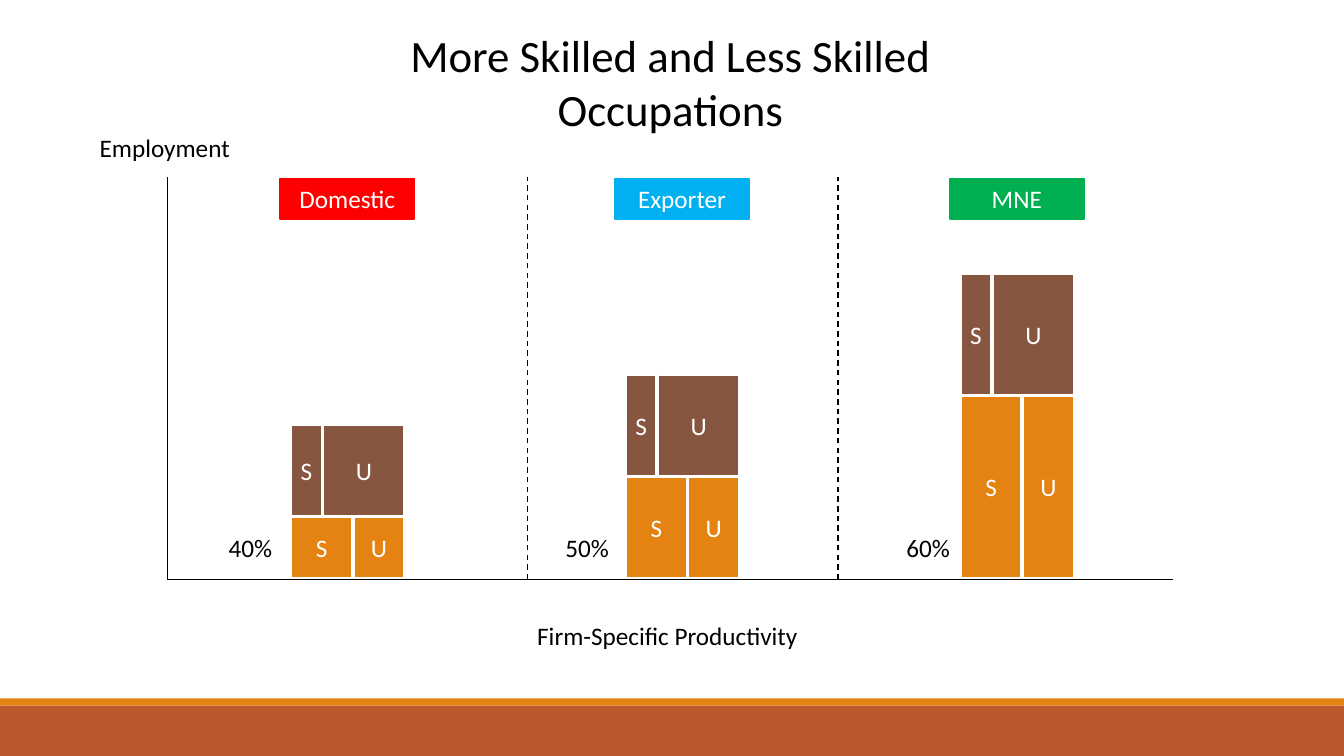
"""Draw employment by skill level for three groups of firms."""
from dataclasses import dataclass

import pptx
import pptx.dml.color
import pptx.enum.dml
import pptx.enum.shapes
import pptx.enum.text
import pptx.oxml
import pptx.util

Inches = pptx.util.Inches
Pt = pptx.util.Pt
Align = pptx.enum.text.PP_ALIGN
Anchor = pptx.enum.text.MSO_ANCHOR


@dataclass(frozen=True)
class Theme:
    """Colours and type sizes."""
    font: str = "Calibri"
    title_size: int = 32
    body_size: int = 18
    black: str = "000000"
    white: str = "FFFFFF"
    rust: str = "BD582C"
    orange: str = "E48312"
    brown: str = "865640"
    red: str = "FF0000"
    blue: str = "00B0F0"
    green: str = "00B050"


class Painter:
    """Add styled elements to one page."""

    def __init__(self, page, theme):
        """Keep the page and its theme."""
        self.page = page
        self.theme = theme

    def colour(self, value):
        """Turn a hex value into a colour."""
        return pptx.dml.color.RGBColor.from_string(value)

    def set_text(self, shape, text, size, colour, align):
        """Put one styled paragraph into a shape."""
        para = shape.text_frame.paragraphs[0]
        para.text = text
        para.alignment = align
        para.font.name = self.theme.font
        para.font.size = Pt(size)
        para.font.color.rgb = self.colour(colour)

    def label(self, text, left, top, width, height=0.4, size=None, align=Align.LEFT):
        """Add a text box."""
        box = self.page.shapes.add_textbox(
            Inches(left), Inches(top), Inches(width), Inches(height))
        box.text_frame.word_wrap = True
        box.text_frame.auto_size = pptx.enum.text.MSO_AUTO_SIZE.SHAPE_TO_FIT_TEXT
        self.set_text(box, text, size or self.theme.body_size, self.theme.black, align)

    def block(self, left, top, width, height, fill, line=None, text=""):
        """Add a filled rectangle, with centred text if given."""
        box = self.page.shapes.add_shape(
            pptx.enum.shapes.MSO_SHAPE.RECTANGLE,
            Inches(left), Inches(top), Inches(width), Inches(height))
        box.shadow.inherit = False
        box.fill.solid()
        box.fill.fore_color.rgb = self.colour(fill)
        if line:
            box.line.color.rgb = self.colour(line)
            box.line.width = Pt(1.25)
        else:
            box.line.fill.background()
        if text:
            frame = box.text_frame
            frame.margin_left = frame.margin_right = 0
            frame.vertical_anchor = Anchor.MIDDLE
            self.set_text(box, text, self.theme.body_size, self.theme.white, Align.CENTER)

    def rule(self, start, end, dashed=False):
        """Add a thin black line."""
        line = self.page.shapes.add_connector(
            pptx.enum.shapes.MSO_CONNECTOR.STRAIGHT,
            *(Inches(value) for value in start + end))
        line.line.color.rgb = self.colour(self.theme.black)
        line.line.width = Pt(1)
        if dashed:
            line.line.dash_style = pptx.enum.dml.MSO_LINE.DASH
        line._element.spPr.append(pptx.oxml.parse_xml(
            '<a:effectLst xmlns:a="http://schemas.openxmlformats.org/drawingml/2006/main"/>'))

    def layer(self, left, top, height, fill, widths):
        """Add a skilled and an unskilled block side by side."""
        for text, width in zip("SU", widths):
            self.block(left, top, width, height, fill, self.theme.white, text)
            left += width + 0.02

    def firm(self, name, left, colour, share, share_left, lower, upper):
        """Add the tag, the share and the stacked blocks of one firm type."""
        self.block(left, 1.77, 1.33, 0.4, colour, colour, name)
        self.label(share, share_left, 5.23, 0.71)
        lower_top = 5.73 - lower
        upper_top = lower_top - 0.01 - upper
        self.layer(left + 0.11, lower_top, lower, self.theme.orange, (0.6, 0.5))
        self.layer(left + 0.11, upper_top, upper, self.theme.brown, (0.3, 0.8))


def main():
    """Build and save the deck."""
    theme = Theme()
    deck = pptx.Presentation()
    deck.slide_width, deck.slide_height = Inches(13.33), Inches(7.5)
    painter = Painter(deck.slides.add_slide(deck.slide_layouts[6]), theme)

    painter.block(0, 7, 13.33, 0.5, theme.rust)
    painter.block(0, 6.93, 13.33, 0.07, theme.orange)

    axis_left, axis_top, axis_bottom = 1.66, 1.76, 5.75
    painter.rule((axis_left, axis_top), (axis_left, axis_bottom))
    painter.rule((axis_left, axis_bottom), (11.63, axis_bottom))
    for divider in (5.23, 8.31):
        painter.rule((divider, axis_bottom), (divider, axis_top), dashed=True)
    painter.label("Employment", 0.89, 1.26, 1.53)
    painter.label("Firm-Specific Productivity", 5.23, 6.11, 2.83)

    firms = (
        ("Domestic", theme.red, "40%", 2.17, 0.6, 0.9),
        ("Exporter", theme.blue, "50%", 5.51, 1, 1),
        ("MNE", theme.green, "60%", 8.89, 1.8, 1.2),
    )
    for index, (name, *details) in enumerate(firms):
        painter.firm(name, 2.78 + 3.32 * index, *details)

    painter.label("More Skilled and Less Skilled Occupations", 2.81, 0.23, 7.68, 0.64,
                  theme.title_size, Align.CENTER)
    deck.save("out.pptx")


if __name__ == "__main__":
    main()
